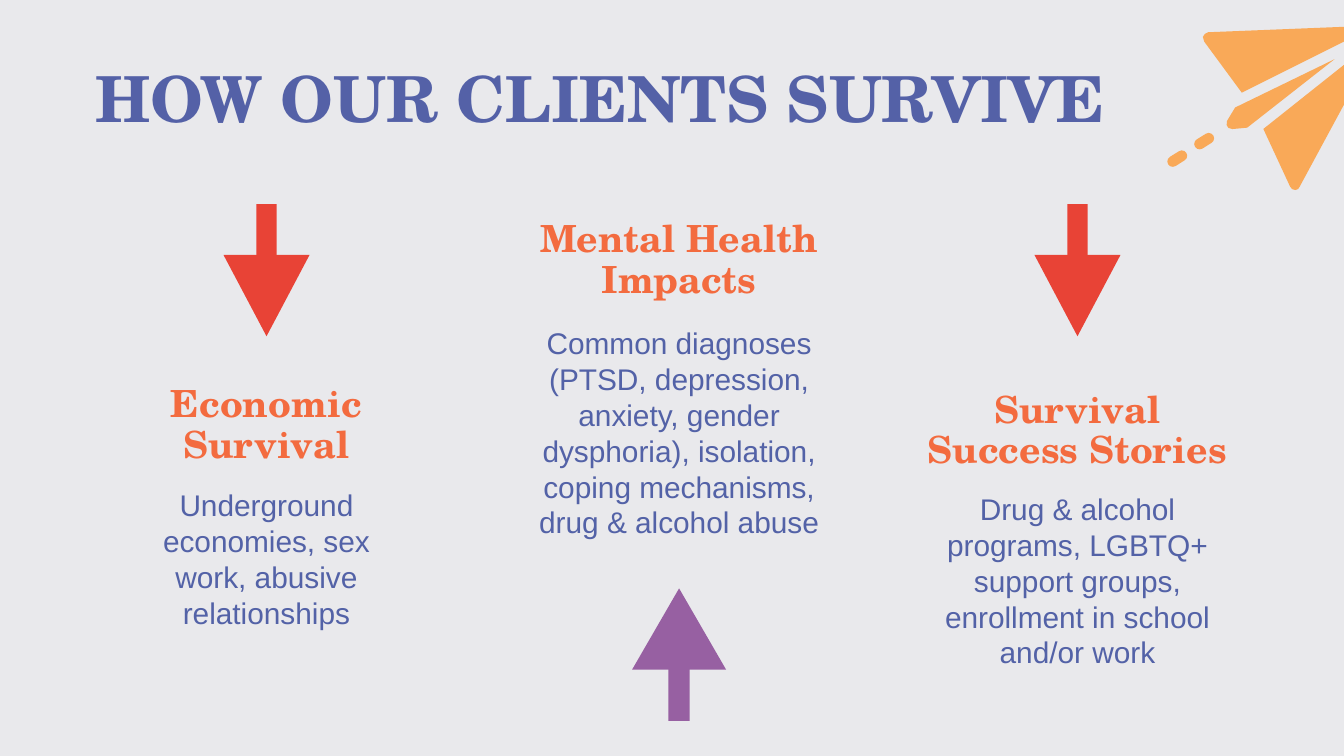
import pptx
import pptx.util
import pptx.dml.color
import pptx.enum.shapes
import pptx.enum.text
from lxml import etree

RGB = pptx.dml.color.RGBColor
GREY = RGB(0xE9, 0xE9, 0xEC)
INDIGO = RGB(0x54, 0x61, 0xA7)
BLUE = RGB(0x53, 0x62, 0xA7)
ORANGE = RGB(0xF3, 0x6B, 0x3F)
RED = RGB(0xE8, 0x43, 0x36)
PURPLE = RGB(0x97, 0x60, 0xA2)
AMBER = RGB(0xF9, 0xA9, 0x58)
SERIF, SANS = "TeX Gyre Schola", "Arial"

SHAPE = pptx.enum.shapes.MSO_SHAPE
ANCHOR = pptx.enum.text.MSO_ANCHOR
ALIGN = pptx.enum.text.PP_ALIGN

deck = pptx.Presentation()
deck.slide_width = pptx.util.Inches(10)
deck.slide_height = deck.slide_width * 9 // 16
CELL = deck.slide_width // 100  # square grid, 100 columns across the slide

slide = deck.slides.add_slide(deck.slide_layouts.get_by_name("Comparison"))
slide.background.fill.solid()
slide.background.fill.fore_color.rgb = GREY


def write(holder, box, words, size, font, color, bold, align, anchor, spacing):
    """Place a text holder on the grid and fill it with one formatted run."""
    holder.left, holder.top, holder.width, holder.height = [int(n * CELL) for n in box]
    frame = holder.text_frame
    frame.word_wrap = True
    frame.auto_size = pptx.enum.text.MSO_AUTO_SIZE.NONE
    frame.vertical_anchor = anchor
    frame.margin_left = frame.margin_right = CELL
    frame.margin_top = frame.margin_bottom = CELL
    paragraph = frame.paragraphs[0]
    paragraph.alignment = align
    paragraph.line_spacing = spacing
    paragraph.space_before = pptx.util.Pt(0)
    # No bullet and no indent
    props = paragraph._p.get_or_add_pPr()
    props.set("marL", "0")
    props.set("indent", "0")
    etree.SubElement(props, pptx.oxml.ns.qn("a:buNone"))
    run = paragraph.add_run()
    run.text = words
    run.font.size = pptx.util.Pt(size)
    run.font.name = font
    run.font.bold = bold
    run.font.color.rgb = color


def paint(shape, color):
    """Plain fill without outline or shadow."""
    shape.shadow.inherit = False
    shape.fill.solid()
    shape.fill.fore_color.rgb = color
    shape.line.fill.background()


# Slide title
title, left_head, left_body, right_head, right_body = slide.placeholders
write(title, (6.1, 4.05, 80.5, 6.3), "HOW OUR CLIENTS SURVIVE",
      34, SERIF, INDIGO, True, ALIGN.LEFT, ANCHOR.TOP, 0.9)

# Three topics: holders, centre column, heading row, body row, wording
middle_head, middle_body = [slide.shapes.add_textbox(0, 0, CELL, CELL) for _ in range(2)]
topics = [
    (left_head, left_body, 19.83, 27.13, 37.53, "Economic Survival",
     "Underground economies, sex work, abusive relationships"),
    (middle_head, middle_body, 50.53, 14.86, 28.13, "Mental Health Impacts",
     "Common diagnoses (PTSD, depression, anxiety, gender dysphoria), "
     "isolation, coping mechanisms, drug & alcohol abuse"),
    (right_head, right_body, 80.17, 27.57, 39.13, "Survival Success Stories",
     "Drug & alcohol programs, LGBTQ+ support groups, "
     "enrollment in school and/or work"),
]
for head, body, center, head_row, body_row, heading, details in topics:
    write(head, (center - 12.5, head_row, 25, 9.1), heading,
          20, SERIF, ORANGE, True, ALIGN.CENTER, ANCHOR.MIDDLE, 0.9)
    write(body, (center - 11.6, body_row, 23.2, 8.1), details,
          16, SANS, BLUE, False, ALIGN.CENTER, ANCHOR.MIDDLE, 1.0)

# Arrows: centre column, head row, shaft row, head width, shaft width, turn, colour
arrows = [
    (50.53, 43.78, 48, 7, 1.6, 0, PURPLE),
    (19.83, 18.97, 15.18, 6.4, 1.5, 180, RED),
    (80.17, 18.97, 15.18, 6.4, 1.5, 180, RED),
]
for center, head_row, shaft_row, head_width, shaft_width, turn, color in arrows:
    arrow = slide.shapes.add_group_shape()
    for kind, row, width, height in (
        (SHAPE.ISOSCELES_TRIANGLE, head_row, head_width, 6.05),
        (SHAPE.RECTANGLE, shaft_row, shaft_width, 5.65),
    ):
        part = arrow.shapes.add_shape(
            kind, int((center - width / 2) * CELL), int(row * CELL),
            int(width * CELL), int(height * CELL))
        part.rotation = turn
        paint(part, color)

# Paper plane: trail dashes, then the three folds running off the right edge
plane = slide.shapes.add_group_shape()
for center, row in ((87.6, 11.8), (89.6, 10.5)):
    dash = plane.shapes.add_shape(
        SHAPE.ROUNDED_RECTANGLE, int((center - 0.8) * CELL), int((row - 0.4) * CELL),
        int(1.6 * CELL), int(0.8 * CELL))
    dash.adjustments[0] = 0.5
    dash.rotation = -32
    paint(dash, AMBER)

# Corners in hundredths of a cell
folds = [
    [(10240, 190), (8990, 240), (8965, 252), (8950, 275), (8960, 310), (9240, 690)],
    [(10280, 260), (9400, 960), (9600, 1390), (9615, 1408), (9637, 1414),
     (9658, 1408), (9670, 1390)],
    [(9930, 440), (9190, 800), (9130, 900), (9127, 930), (9140, 952),
     (9170, 960), (9280, 950)],
]
for (start_x, start_y), *corners in folds:
    outline = plane.shapes.build_freeform(start_x, start_y, scale=CELL / 100)
    outline.add_line_segments(corners, close=True)
    paint(outline.convert_to_shape(), AMBER)

deck.save("out.pptx")
